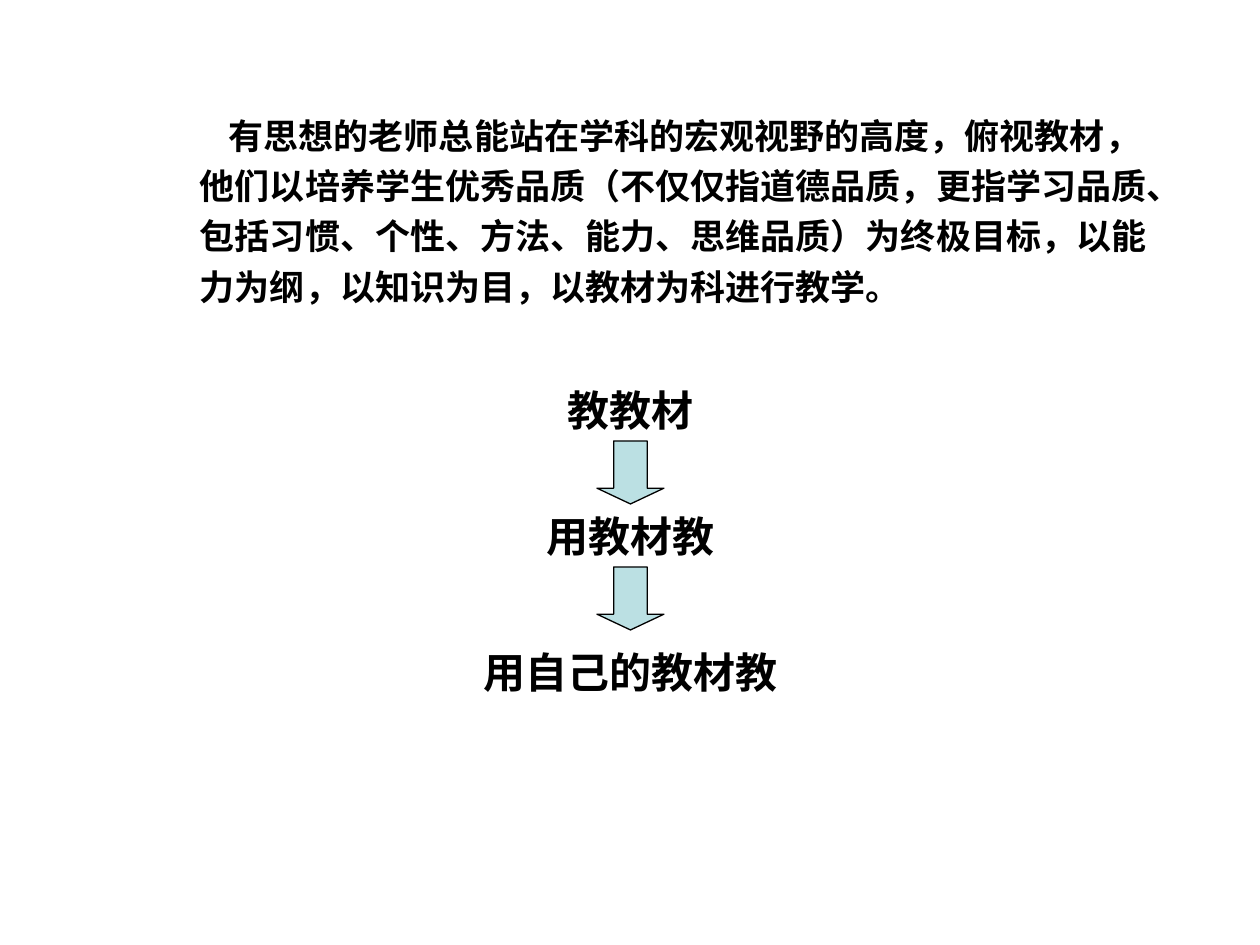
from pptx import Presentation
from pptx.dml.color import RGBColor
from pptx.enum.shapes import MSO_SHAPE
from pptx.enum.text import MSO_ANCHOR, PP_ALIGN
from pptx.oxml.ns import qn
from pptx.util import Cm, Pt
from lxml.etree import SubElement

BLACK = RGBColor(0x00, 0x00, 0x00)
PALE_TEAL = RGBColor(0xBB, 0xE0, 0xE3)
CHINESE_FONT = "Noto Sans CJK SC"

VIEWPOINT = (
    "有思想的老师总能站在学科的宏观视野的高度，俯视教材，"
    "他们以培养学生优秀品质（不仅仅指道德品质，更指学习品质、"
    "包括习惯、个性、方法、能力、思维品质）为终极目标，"
    "以能力为纲，以知识为目，以教材为科进行教学。"
)
# Each stage of teaching with its distance from the top of the flow
STAGES = [("教教材", 0), ("用教材教", 2.54), ("用自己的教材教", 5.28)]


def add_bold_text(para, text, size, font):
    span = para.add_run()
    span.text = text
    span.font.size = Pt(size)
    span.font.bold = True
    span.font.name = font
    span.font.color.rgb = BLACK
    # East Asian typeface
    SubElement(span.font._element, qn("a:ea"), typeface=CHINESE_FONT)


def add_viewpoint(page, left, top, width, height):
    box = page.shapes.add_textbox(Cm(left), Cm(top), Cm(width), Cm(height))
    frame = box.text_frame
    frame.word_wrap = True
    frame.margin_top = Cm(0.3)
    para = frame.paragraphs[0]
    para.line_spacing = 1.2
    para._p.get_or_add_pPr().set("indent", str(Cm(0.58)))
    add_bold_text(para, VIEWPOINT, 20, CHINESE_FONT)


def add_stage(page, text, left, top, width, height):
    box = page.shapes.add_textbox(Cm(left), Cm(top), Cm(width), Cm(height))
    frame = box.text_frame
    frame.word_wrap = False
    frame.vertical_anchor = MSO_ANCHOR.MIDDLE
    para = frame.paragraphs[0]
    para.alignment = PP_ALIGN.CENTER
    add_bold_text(para, text, 24, "Arial")


def add_down_arrow(page, left, top, width, height):
    arrow = page.shapes.add_shape(
        MSO_SHAPE.DOWN_ARROW, Cm(left), Cm(top), Cm(width), Cm(height))
    arrow.adjustments[0] = 0.5
    arrow.adjustments[1] = 0.25
    arrow.shadow.inherit = False
    arrow.fill.solid()
    arrow.fill.fore_color.rgb = PALE_TEAL
    arrow.line.color.rgb = BLACK
    arrow.line.width = Pt(0.75)


def add_stage_flow(page, center, top):
    row_height, arrow_width = 1.27, 1.35
    for index, (text, offset) in enumerate(STAGES):
        # Label width: one 24 pt character each, plus the side margins
        width = len(text) * 0.85 + 0.5
        add_stage(page, text, center - width / 2, top + offset, width, row_height)
        if index < len(STAGES) - 1:
            add_down_arrow(page, center - arrow_width / 2,
                           top + offset + row_height, arrow_width, row_height)


def main():
    deck = Presentation()
    deck.slide_width, deck.slide_height = Cm(25.4), Cm(19.05)
    page = deck.slides.add_slide(deck.slide_layouts[6])
    add_viewpoint(page, 3.78, 1.83, 20.12, 4.52)
    add_stage_flow(page, center=12.71, top=7.62)
    deck.save("out.pptx")


if __name__ == "__main__":
    main()
